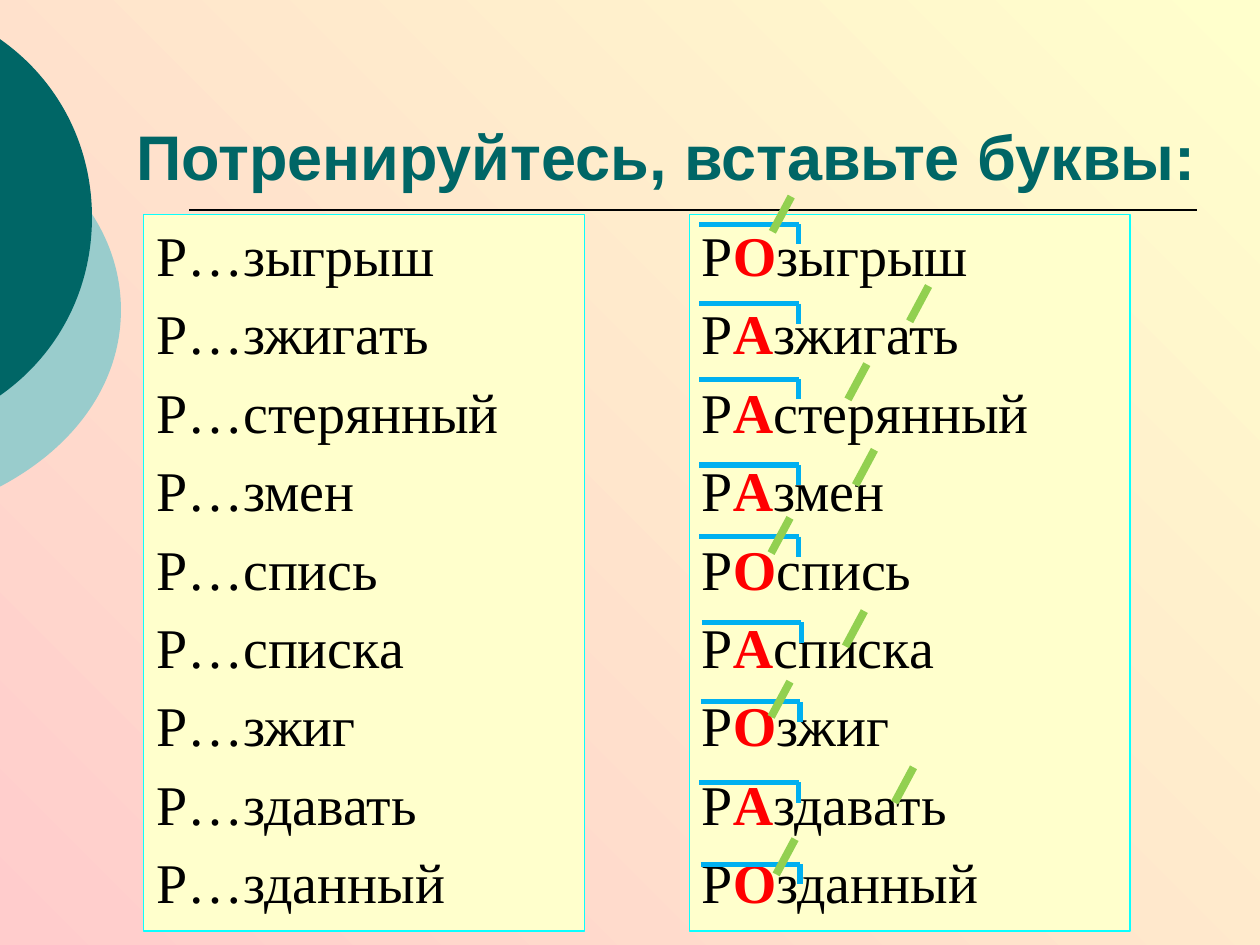
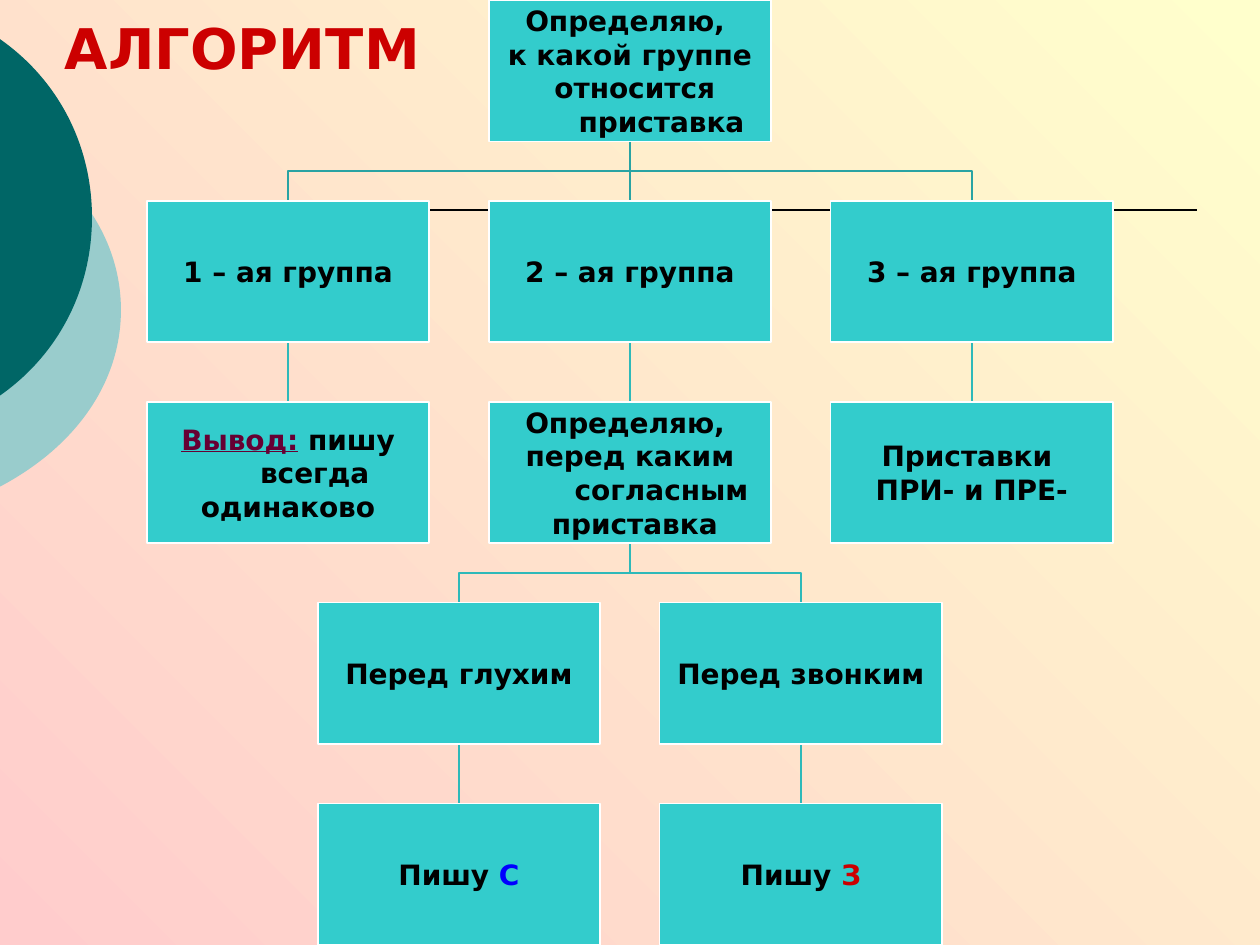
from lxml import etree
from pptx import Presentation
from pptx import util as u
from pptx.dml.color import RGBColor
from pptx.enum import shapes, text
from pptx.oxml.ns import qn

W, H = 10, 7.5
PINK = RGBColor(0xFF, 0xCC, 0xCC)
CREAM = RGBColor(0xFF, 0xFF, 0xCC)
TEAL = RGBColor(0x00, 0x66, 0x66)
MIST = RGBColor(0x99, 0xCC, 0xCC)
AQUA = RGBColor(0x0A, 0xFF, 0xFF)
TURQUOISE = RGBColor(0x33, 0xCC, 0xCC)
BRANCH_TOP = RGBColor(0x29, 0xA3, 0xA3)
BRANCH = RGBColor(0x2E, 0xB9, 0xB9)
SKY = RGBColor(0x00, 0xB0, 0xF0)
GREEN = RGBColor(0x92, 0xD0, 0x50)
BLACK = RGBColor(0, 0, 0)
WHITE = RGBColor(0xFF, 0xFF, 0xFF)
RED = RGBColor(0xFF, 0, 0)
CRIMSON = RGBColor(0xCC, 0, 0)
BLUE = RGBColor(0, 0, 0xFF)
PLUM = RGBColor(0x66, 0, 0x33)

SERIF, SANS, WIDE = "Times New Roman", "Arial", "DejaVu Sans"

RULE_Y = H * 2 / 9
WORD_BOX = (0.547 * W, 1.7, 0.35 * W, 5.69)
GAP_BOX = (0.114 * W, *WORD_BOX[1:])
TREE_WIDTH = 7.67
TREE_BOX = ((W - TREE_WIDTH) / 2, 0, TREE_WIDTH, H)

WORDS = [
    ("О", "зыгрыш", (0.08, 0.08), (0.66, -0.14)),
    ("А", "зжигать", (0.08, 0.71), (1.75, 0.57)),
    ("А", "стерянный", (0.08, 1.31), (1.26, 1.19)),
    ("А", "змен", (0.08, 1.99), (1.32, 1.87)),
    ("О", "спись", (0.08, 2.56), (0.65, 2.41)),
    ("А", "списка", (0.10, 3.24), (1.24, 3.15)),
    ("О", "зжиг", (0.09, 3.87), (0.65, 3.71)),
    ("А", "здавать", (0.08, 4.51), (1.63, 4.39)),
    ("О", "зданный", (0.09, 5.16), (0.69, 4.96)),
]

NODES = {
    (1, 0): [[("Определяю, ", BLACK)], [("к какой группе", BLACK)],
             [(" относится приставка", BLACK)]],
    (0, 1): [[("1 – ая группа", BLACK)]],
    (1, 1): [[("2 – ая группа", BLACK)]],
    (2, 1): [[("3 – ая группа", BLACK)]],
    (0, 2): [[("Вывод:", PLUM), (" пишу всегда ", BLACK)], [("одинаково", BLACK)]],
    (1, 2): [[("Определяю, ", BLACK)], [("перед каким согласным", BLACK)],
             [(" приставка", BLACK)]],
    (2, 2): [[("Приставки ", BLACK)], [("ПРИ- и ПРЕ-", BLACK)]],
    (0.5, 3): [[("Перед глухим", BLACK)]],
    (1.5, 3): [[("Перед звонким", BLACK)]],
    (0.5, 4): [[("Пишу ", BLACK), ("С", BLUE)]],
    (1.5, 4): [[("Пишу ", BLACK), ("З", CRIMSON)]],
}
EDGES = [
    ((1, 0), (0, 1)), ((1, 0), (1, 1)), ((1, 0), (2, 1)),
    ((0, 1), (0, 2)), ((1, 1), (1, 2)), ((2, 1), (2, 2)),
    ((1, 2), (0.5, 3)), ((1, 2), (1.5, 3)),
    ((0.5, 3), (0.5, 4)), ((1.5, 3), (1.5, 4)),
]


def add_run(p, words, font, size, color, bold=False, underline=False):
    r = p.add_run()
    r.text = words
    f = r.font
    f.name, f.size, f.bold = font, u.Pt(size), bold
    f.color.rgb = color
    if underline:
        f.underline = True


def add_line(s, start, end, color, width):
    sp = s.shapes.add_connector(shapes.MSO_CONNECTOR.STRAIGHT,
                                *(u.Inches(v) for v in (*start, *end)))
    sp.line.color.rgb = color
    sp.line.width = u.Pt(width)
    etree.SubElement(sp._element.spPr, qn("a:effectLst"))


def add_outline(s, box, steps):
    left, top, width, height = box
    right, bottom = left + width, top + height
    builder = s.shapes.build_freeform(u.Inches(left), u.Inches(top))
    builder.add_line_segments([(u.Inches(x), u.Inches(y)) for x, y in
                               ((right, top), (right, bottom), (left, bottom))])
    sp = builder.convert_to_shape()
    sp.shadow.inherit = False
    outline = sp._element.spPr.find(".//" + qn("a:path"))
    for old in list(outline):
        outline.remove(old)
    for command, *points in steps:
        step = etree.SubElement(outline, qn("a:" + command))
        for x, y in points:
            etree.SubElement(step, qn("a:pt"), x=str(u.Inches(x - left)),
                             y=str(u.Inches(y - top)))
    return sp


def add_panel(s, box, fill, line, width):
    sp = s.shapes.add_shape(shapes.MSO_SHAPE.RECTANGLE, *(u.Inches(v) for v in box))
    sp.shadow.inherit = False
    sp.fill.solid()
    sp.fill.fore_color.rgb = fill
    sp.line.color.rgb = line
    sp.line.width = u.Pt(width)
    sp.text_frame.word_wrap = True
    return sp.text_frame


def add_paragraphs(tf, count):
    return [tf.paragraphs[0], *(tf.add_paragraph() for _ in range(count - 1))]


def add_disc(s, box, color):
    left, top, width, height = box
    right, ry = left + width, height / 2
    cy = top + ry
    upper = [(0, cy - 0.82 * ry), (0.64 * right, cy - 0.63 * ry),
             (right, cy - 0.33 * ry)]
    lower = [(x, 2 * cy - y) for x, y in reversed(upper)]
    sp = add_outline(s, box, [("moveTo", upper[0]),
                              ("cubicBezTo", *upper[1:], (right, cy)),
                              ("cubicBezTo", *lower), ("close",)])
    sp.fill.solid()
    sp.fill.fore_color.rgb = color
    sp.line.fill.background()


def add_branch(s, start, end, color):
    (x1, y1), (x2, y2) = start, end
    middle = (y1 + y2) / 2
    if x1 == x2:
        box = (x1 - 0.05, y1, 0.1, y2 - y1)
        turns = []
    else:
        box = (min(x1, x2), y1, abs(x2 - x1), y2 - y1)
        turns = [(x1, middle), (x2, middle)]
    sp = add_outline(s, box, [("moveTo", start),
                              *(("lnTo", point) for point in (*turns, end))])
    sp.fill.background()
    sp.line.color.rgb = color
    sp.line.width = u.Pt(1)


def add_base(prs):
    s = prs.slides.add_slide(prs.slide_layouts[5])
    fill = s.background.fill
    fill.gradient()
    fill.gradient_angle = 45
    for stop, color in zip(fill.gradient_stops, (PINK, CREAM)):
        stop.color.rgb = color
    add_disc(s, (-3.54, 0.75, 4.5, 3.42), MIST)
    add_disc(s, (-2.65, 0, 3.38, 3.45), TEAL)
    add_line(s, (0.15 * W, RULE_Y), (0.95 * W, RULE_Y), BLACK, 1)
    return s


def set_title(s, box, words, font, size, color, align, anchor):
    sp = s.shapes.title
    sp.left, sp.top, sp.width, sp.height = (u.Inches(v) for v in box)
    tf = sp.text_frame
    tf.auto_size = text.MSO_AUTO_SIZE.NONE
    tf.word_wrap = True
    tf.vertical_anchor = anchor
    p = tf.paragraphs[0]
    p.alignment = align
    add_run(p, words, font, size, color, bold=True)


def add_word_list(s, box, rows):
    tf = add_panel(s, box, CREAM, AQUA, 0.75)
    tf.vertical_anchor = text.MSO_ANCHOR.TOP
    for p, runs in zip(add_paragraphs(tf, len(rows)), rows):
        p.alignment = text.PP_ALIGN.LEFT
        p.space_before = u.Pt(6.4)
        for words, color in runs:
            add_run(p, words, SERIF, 32, color, bold=color == RED)


def add_marks(s, box):
    left, top = box[:2]
    for _, _, (x, y), _ in WORDS:
        x, y = left + x, top + y
        corner = (x + 0.79, y)
        add_line(s, (x, y), corner, SKY, 3)
        add_line(s, corner, (x + 0.79, y + 0.16), SKY, 3)
    for _, _, _, (x, y) in WORDS:
        x, y = left + x, top + y
        add_line(s, (x + 0.15, y), (x, y + 0.28), GREEN, 4.5)


def add_tree(s, box):
    left, top, width, height = box
    node_w, node_h = width / 3.42, height / 6.68
    col, row = 1.21 * node_w, 1.42 * node_h

    def corner(node):
        return left + node[0] * col, top + node[1] * row

    for parent, child in EDGES:
        (x1, y1), (x2, y2) = corner(parent), corner(child)
        add_branch(s, (x1 + node_w / 2, y1 + node_h), (x2 + node_w / 2, y2),
                   BRANCH if parent[1] else BRANCH_TOP)

    for node, rows in NODES.items():
        tf = add_panel(s, (*corner(node), node_w, node_h), TURQUOISE, WHITE, 1)
        tf.vertical_anchor = text.MSO_ANCHOR.MIDDLE
        tf.margin_left = tf.margin_right = u.Inches(0.01)
        tf.margin_top = tf.margin_bottom = u.Inches(0.01)
        for p, runs in zip(add_paragraphs(tf, len(rows)), rows):
            p.alignment = text.PP_ALIGN.CENTER
            pPr = p._p.get_or_add_pPr()
            pPr.set("marL", str(u.Inches(0.5)))
            pPr.set("indent", str(u.Inches(-0.5)))
            for words, color in runs:
                add_run(p, words, WIDE, 16, color, True, color == PLUM)


def add_practice_slide(prs):
    s = add_base(prs)
    set_title(s, (0.098 * W, 0.84, 0.882 * W, 0.74), "Потренируйтесь, вставьте буквы:",
              SANS, 36, TEAL, text.PP_ALIGN.LEFT, text.MSO_ANCHOR.BOTTOM)
    add_word_list(s, GAP_BOX, [[("Р…" + end, BLACK)] for _, end, _, _ in WORDS])
    add_word_list(s, WORD_BOX, [[("Р", BLACK), (letter, RED), (end, BLACK)]
                                for letter, end, _, _ in WORDS])
    add_marks(s, WORD_BOX)


def add_algorithm_slide(prs):
    s = add_base(prs)
    set_title(s, (0.035 * W, 0.05, 0.315 * W, 0.64), "АЛГОРИТМ",
              WIDE, 32, CRIMSON, text.PP_ALIGN.CENTER, text.MSO_ANCHOR.MIDDLE)
    add_tree(s, TREE_BOX)


def main():
    prs = Presentation()
    prs.slide_width, prs.slide_height = u.Inches(W), u.Inches(H)
    add_practice_slide(prs)
    add_algorithm_slide(prs)
    prs.save("out.pptx")


if __name__ == "__main__":
    main()
